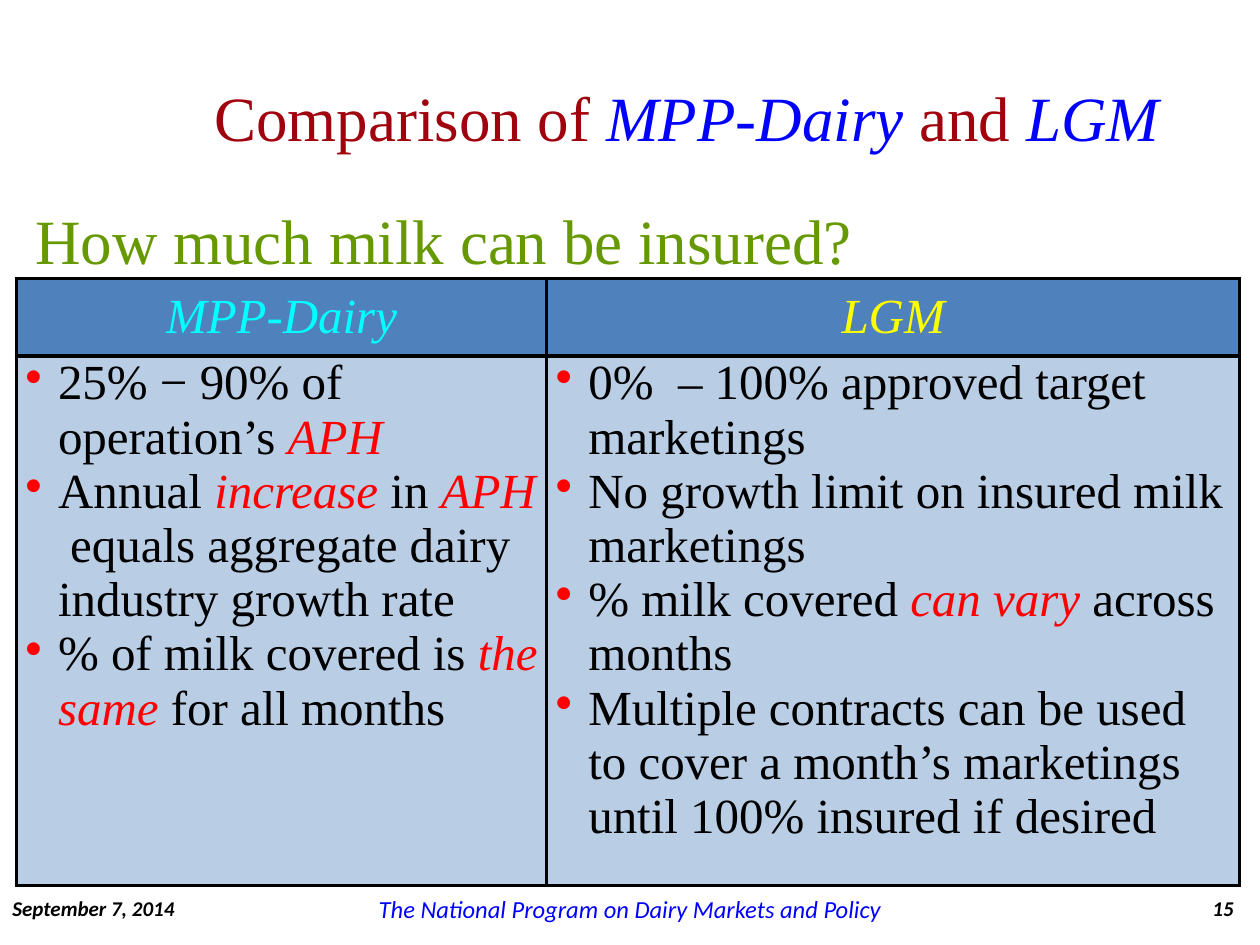
from lxml import etree
from pptx import Presentation
from pptx import util as u
from pptx.dml.color import RGBColor
from pptx.enum import text
from pptx.oxml import parse_xml
from pptx.oxml.ns import nsdecls, qn

BLACK, RED, BLUE = "000000", "FF0000", "0000FF"
SERIF, SANS = "Times New Roman", "Calibri"
LEFT, CENTER, RIGHT = text.PP_ALIGN.LEFT, text.PP_ALIGN.CENTER, text.PP_ALIGN.RIGHT
TOP, MIDDLE = text.MSO_ANCHOR.TOP, text.MSO_ANCHOR.MIDDLE


def color(value):
    return RGBColor.from_string(value)


def add_runs(paragraph, runs, font_name, size, bold=False):
    for words, fill, italic in runs:
        run = paragraph.add_run()
        run.text = words
        run.font.name = font_name
        run.font.size = u.Pt(size)
        run.font.bold = bold
        run.font.italic = italic
        run.font.color.rgb = color(fill)


presentation = Presentation()
presentation.slide_width = u.Cm(25.4)
presentation.slide_height = u.Cm(19.05)
slide = presentation.slides.add_slide(presentation.slide_layouts[6])

title = [("Comparison of ", "A0020E", False), ("MPP-Dairy ", BLUE, True),
         ("and ", "A0020E", False), ("LGM", BLUE, True)]
question = [("How much milk can be insured?", "669900", False)]
date = [("September 7, 2014", BLACK, True)]
program = [("The National Program on Dairy Markets and Policy", BLUE, True)]
number = [("15", BLACK, True)]

text_boxes = [
    (3.56, 0.76, 20.57, 3.18, title, SERIF, 36, False, CENTER, MIDDLE, True),
    (0.46, 3.94, 17.15, 1.8, question, SERIF, 36, False, LEFT, TOP, False),
    (0, 18.01, 3.89, 0.61, date, SANS, 12, True, LEFT, MIDDLE, True),
    (7.32, 18.01, 10.77, 0.61, program, SANS, 14, False, CENTER, MIDDLE, True),
    (23.14, 18.01, 1.98, 0.61, number, SANS, 12, True, RIGHT, MIDDLE, True),
]
for left, top, width, height, runs, font_name, size, bold, align, anchor, wrap in text_boxes:
    shape = slide.shapes.add_textbox(u.Cm(left), u.Cm(top), u.Cm(width), u.Cm(height))
    frame = shape.text_frame
    frame.word_wrap = wrap
    frame.vertical_anchor = anchor
    paragraph = frame.paragraphs[0]
    paragraph.alignment = align
    add_runs(paragraph, runs, font_name, size, bold)

headers = [("MPP-Dairy", "00FFFF"), ("LGM", "FFFF00")]
bullets = [
    [
        [("25% − 90% of operation’s ", BLACK, False), ("APH", RED, True)],
        [("Annual ", BLACK, False), ("increase", RED, True), (" in ", BLACK, False),
         ("APH", RED, True),
         ("  equals aggregate dairy industry growth rate", BLACK, False)],
        [("% of milk covered is ", BLACK, False), ("the same ", RED, True),
         ("for all months", BLACK, False)],
    ],
    [
        [("0%  – 100% approved target marketings", BLACK, False)],
        [("No growth limit on insured milk marketings", BLACK, False)],
        [("% milk covered ", BLACK, False), ("can vary ", RED, True),
         ("across months", BLACK, False)],
        [("Multiple contracts can be used to cover a month’s marketings "
          "until 100% insured if desired", BLACK, False)],
    ],
]

table = slide.shapes.add_table(2, 2, u.Cm(0.33), u.Cm(5.61), u.Cm(24.66), u.Cm(11.41)).table
for column, width in zip(table.columns, (10.69, 13.97)):
    column.width = u.Cm(width)
for row, height in zip(table.rows, (1.57, 9.84)):
    row.height = u.Cm(height)

for cell in table.iter_cells():
    cell.margin_left = cell.margin_right = u.Cm(0.18)
    cell.margin_top = cell.margin_bottom = 0
    properties = cell._tc.get_or_add_tcPr()
    for side in ("lnL", "lnR", "lnT", "lnB"):
        properties.append(parse_xml(
            f'<a:{side} {nsdecls("a")} w="{u.Pt(2.25)}"><a:solidFill>'
            f'<a:srgbClr val="{BLACK}"/></a:solidFill></a:{side}>'))
    cell.fill.solid()

for index, (name, name_color) in enumerate(headers):
    header = table.cell(0, index)
    header.fill.fore_color.rgb = color("4F81BD")
    header.vertical_anchor = MIDDLE
    paragraph = header.text_frame.paragraphs[0]
    paragraph.alignment = CENTER
    add_runs(paragraph, [(name, name_color, True)], SERIF, 28)

    body = table.cell(1, index)
    body.fill.fore_color.rgb = color("B9CDE5")
    frame = body.text_frame
    for position, runs in enumerate(bullets[index]):
        paragraph = frame.add_paragraph() if position else frame.paragraphs[0]
        properties = paragraph._p.get_or_add_pPr()
        properties.set("marL", str(u.Cm(0.66)))
        properties.set("indent", str(-u.Cm(0.66)))
        bullet_color = etree.SubElement(properties, qn("a:buClr"))
        etree.SubElement(bullet_color, qn("a:srgbClr"), val=RED)
        etree.SubElement(properties, qn("a:buChar"), char="•")
        add_runs(paragraph, runs, SERIF, 28)

presentation.save("out.pptx")
